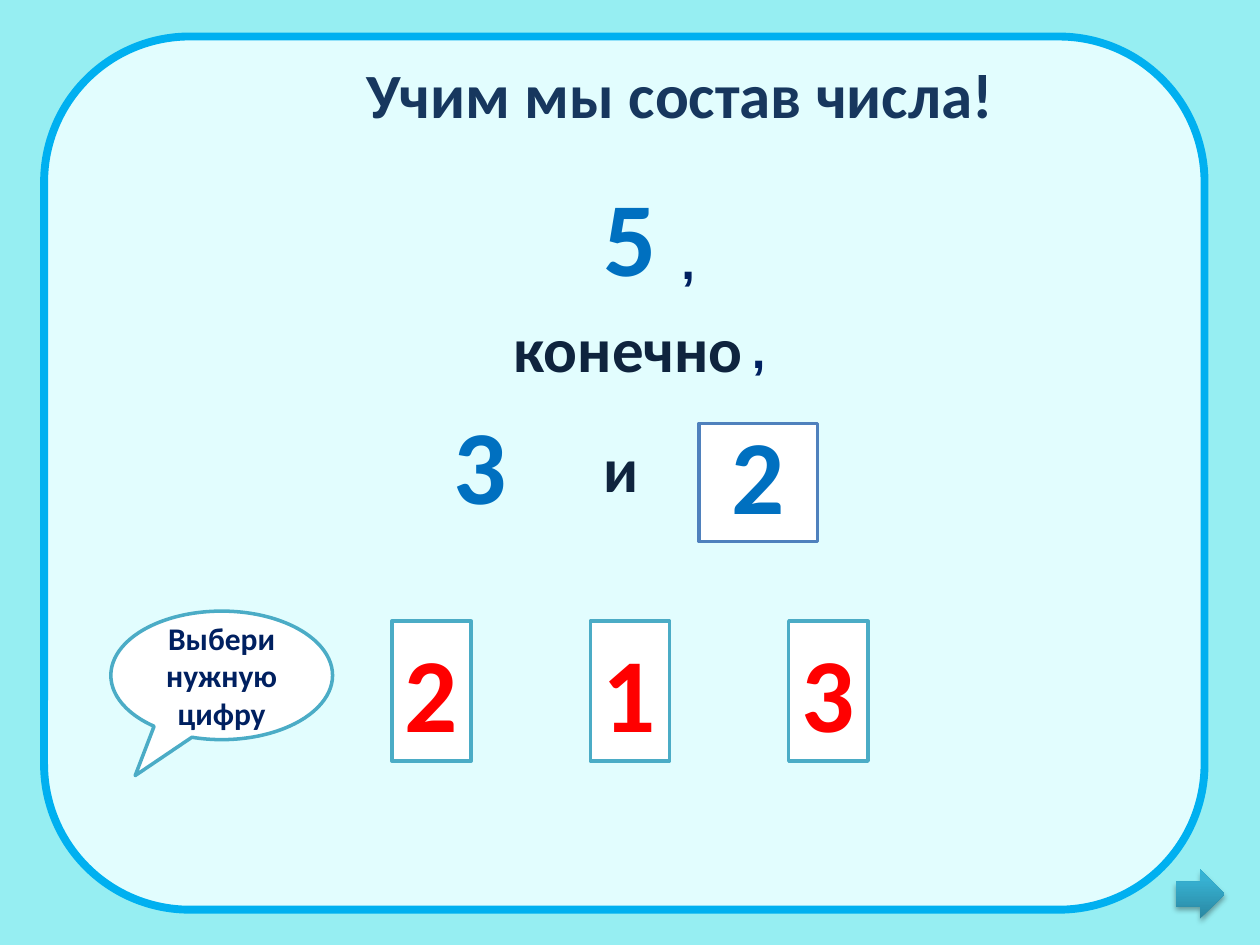
from copy import deepcopy

from lxml.etree import SubElement
from pptx import Presentation
from pptx.dml.color import RGBColor
from pptx.enum.shapes import MSO_SHAPE as Shape
from pptx.enum.text import MSO_ANCHOR as Anchor, MSO_AUTO_SIZE as AutoSize, PP_ALIGN as Align
from pptx.oxml.ns import qn
from pptx.util import Inches, Pt

COLUMNS, ROWS = 100, 75
BLUE, DARK, NAVY, TEAL, WHITE = "0070C0", "0F243E", "002060", "4BACC6", "FFFFFF"


def color(hex_code):
    return RGBColor.from_string(hex_code)


class SlideBuilder:
    """Draws on one slide; every area is (column, row, columns wide, rows high)."""

    def __init__(self, deck, background):
        self.cell_width = deck.slide_width / COLUMNS
        self.cell_height = deck.slide_height / ROWS
        self.slide = deck.slides.add_slide(deck.slide_layouts[6])
        self.slide.background.fill.solid()
        self.slide.background.fill.fore_color.rgb = color(background)

    def place(self, area):
        left, top, width, height = area
        return (round(left * self.cell_width), round(top * self.cell_height),
                round(width * self.cell_width), round(height * self.cell_height))

    def set_text(self, box, text, size, hex_code, font="Calibri", align=Align.LEFT,
                 anchor=Anchor.TOP, wrap=False, grow=True):
        frame = box.text_frame
        frame.word_wrap = wrap
        frame.auto_size = AutoSize.SHAPE_TO_FIT_TEXT if grow else AutoSize.NONE
        frame.vertical_anchor = anchor
        para = frame.paragraphs[0]
        para.text = text
        para.alignment = align
        para.font.name, para.font.size, para.font.bold = font, Pt(size), True
        para.font.color.rgb = color(hex_code)

    def label(self, area, text, size, hex_code, **style):
        box = self.slide.shapes.add_textbox(*self.place(area))
        self.set_text(box, text, size, hex_code, **style)

    def shape(self, kind, area, line, fill=WHITE, line_width=2):
        box = self.slide.shapes.add_shape(kind, *self.place(area))
        box.shadow.inherit = False
        box.fill.solid()
        box.fill.fore_color.rgb = color(fill)
        box.line.color.rgb = color(line)
        box.line.width = Pt(line_width)
        return box

    def callout(self, area, text, tail):
        box = self.shape(Shape.OVAL_CALLOUT, area, TEAL)
        box.adjustments[0], box.adjustments[1] = tail
        self.set_text(box, text, 18, NAVY, align=Align.CENTER, anchor=Anchor.MIDDLE,
                      wrap=True, grow=False)

    def next_arrow(self, area, stops):
        """Arrow with a bottom-to-top gradient of three stops and a soft shadow."""
        arrow = self.slide.shapes.add_shape(Shape.RIGHT_ARROW, *self.place(area))
        arrow.line.fill.background()
        arrow.fill.gradient()
        arrow.fill.gradient_angle = 90
        properties = arrow._element.spPr
        stop_list = properties.find(".//" + qn("a:gsLst"))
        stop_list.append(deepcopy(stop_list[-1]))
        for stop, (position, hex_code) in zip(arrow.fill.gradient_stops, stops):
            stop.position = position
            stop.color.rgb = color(hex_code)
        arrow.shadow.inherit = False
        shadow = SubElement(properties.find(qn("a:effectLst")), qn("a:outerShdw"),
                            blurRad=str(Pt(3.1)), dist=str(Pt(1.8)), dir="5400000",
                            rotWithShape="0")
        tint = SubElement(shadow, qn("a:srgbClr"), val="000000")
        SubElement(tint, qn("a:alpha"), val="35000")


def main():
    deck = Presentation()
    deck.slide_width, deck.slide_height = Inches(10), Inches(7.5)
    page = SlideBuilder(deck, "96EEF2")

    page.shape(Shape.ROUNDED_RECTANGLE, (3.5, 2.9, 92.1, 69.3), "00B0F0", "E2FDFE", 4.5)
    page.shape(Shape.RECTANGLE, (55.5, 33.6, 9.4, 9.4), "4F81BD")

    page.label((28.1, 3.9, 52.3, 7.1), "Учим мы состав числа!", 36, "17375E")
    page.label((39.8, 24.1, 20.4, 7.1), "конечно", 36, DARK)
    page.label((46.9, 33.6, 4.8, 7.1), "и", 36, DARK)
    for column, row, digit in [(46.9, 13.1, "5"), (35, 31.2, "3"), (57.1, 32, "2")]:
        page.label((column, row, 6.3, 11.1), digit, 60, BLUE)
    for column, row in [(53.1, 17.8), (58.7, 24.9)]:
        page.label((column, row, 2.4, 5.7), ",", 28, NAVY, font="Arial", wrap=True)

    for index, digit in enumerate("213"):
        card = page.shape(Shape.RECTANGLE, (31.1 + 15.75 * index, 49.3, 6.3, 11.1), TEAL)
        page.set_text(card, digit, 60, "FF0000")

    page.next_arrow((93.3, 69, 3.9, 3.9), [(0, "2A88A2"), (0.8, "37B1D2"), (1, "34B4D6")])
    page.callout((8.8, 48.5, 17.6, 10.2), "Выбери нужную цифру", (-0.39, 0.78))
    deck.save("out.pptx")


if __name__ == "__main__":
    main()
